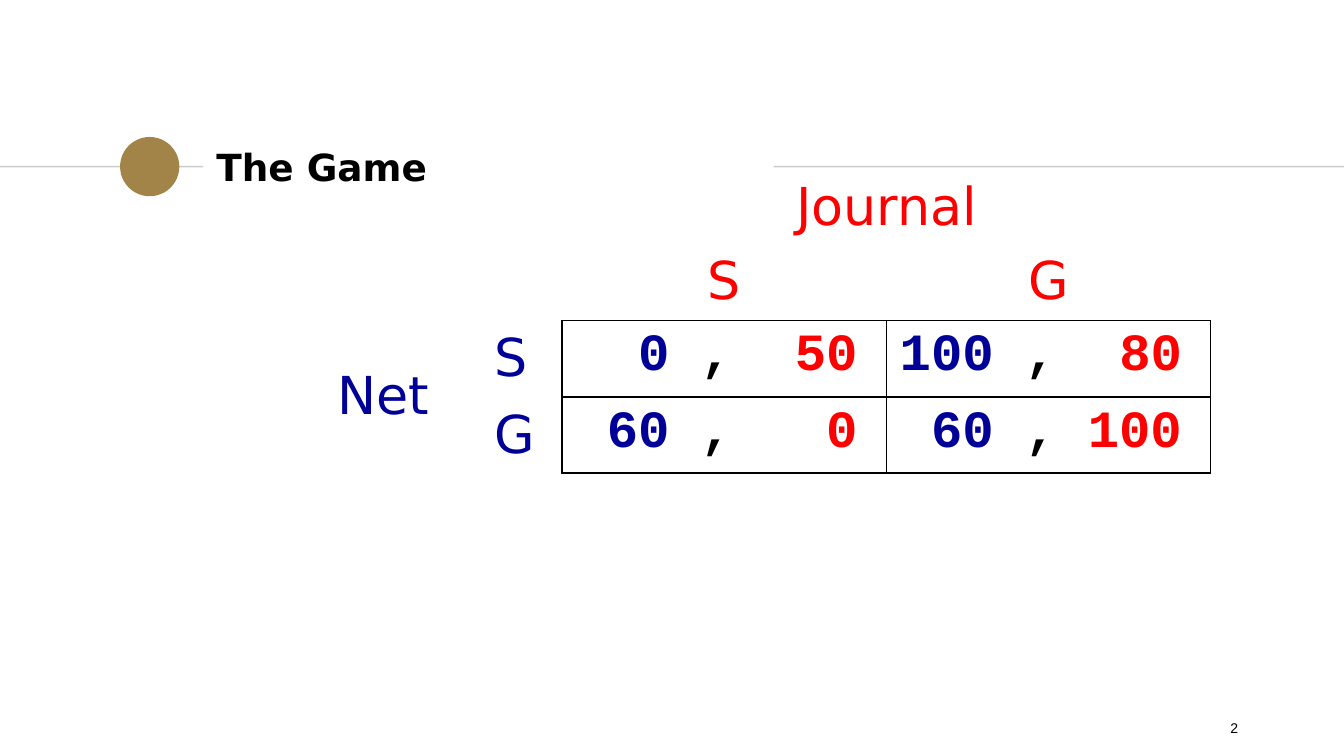
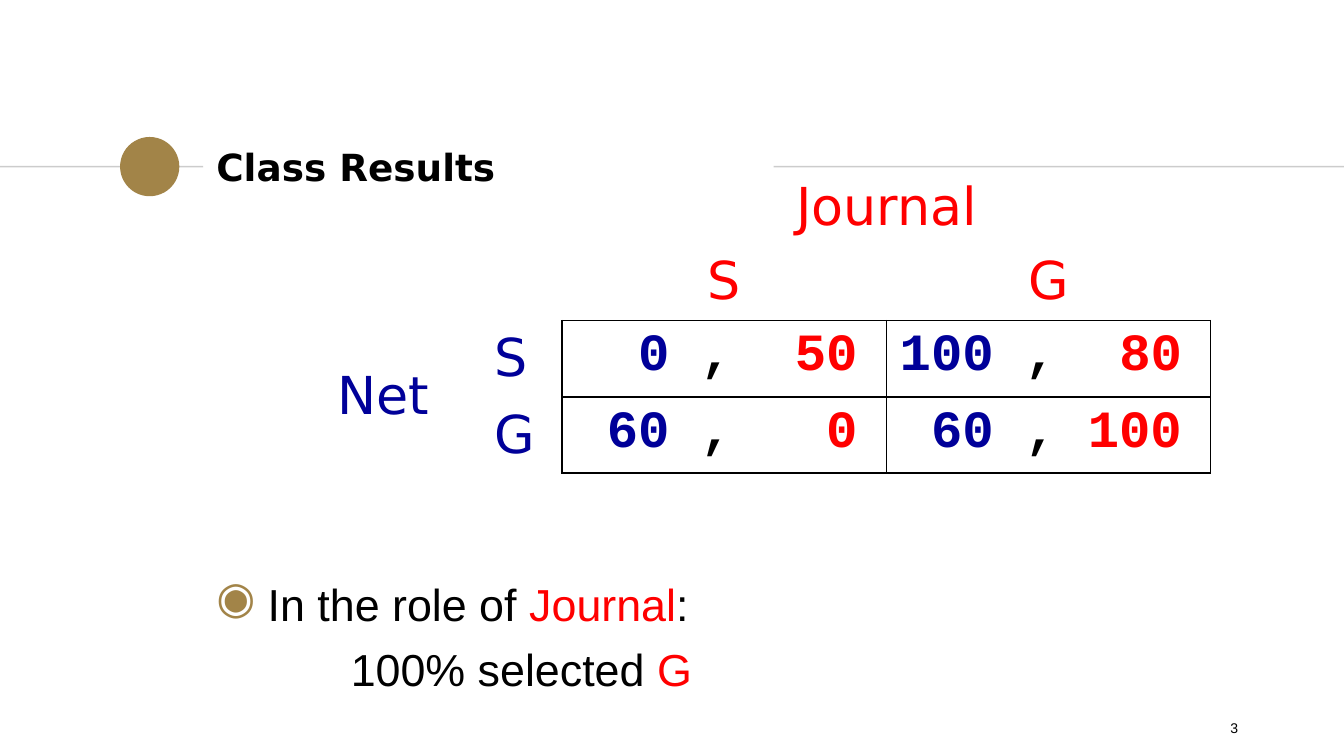
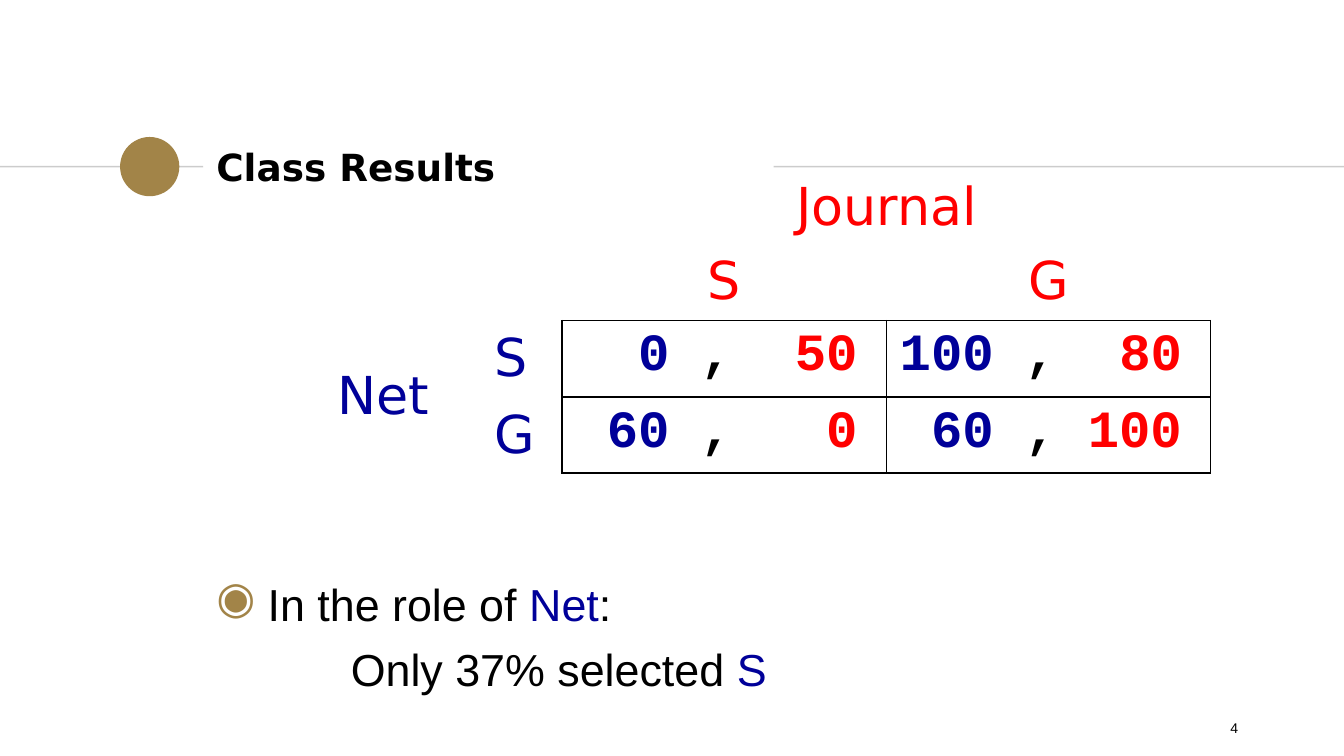
from dataclasses import dataclass
from lxml.etree import SubElement as Sub
from pptx import Presentation as Deck
from pptx.dml.color import RGBColor as Rgb
from pptx.enum.shapes import MSO_CONNECTOR as Link, MSO_SHAPE as Kind
from pptx.enum.text import MSO_ANCHOR as Anchor, PP_ALIGN as Align
from pptx.oxml import parse_xml
from pptx.oxml.ns import nsdecls, qn
from pptx.util import Cm, Pt


@dataclass(frozen=True)
class Theme:
    ink: str = "000000"
    gold: str = "A28448"
    rule: str = "CCCCCC"
    red: str = "FF0000"
    blue: str = "000099"
    sans: str = "Arial"
    head: str = "DejaVu Sans"
    mono: str = "Courier New"
    title: float = 20
    body: float = 24
    grid: float = 28
    foot: float = 7.5


NO_STYLE = "{2D5ABB26-0587-4C30-8999-92F81FD0307C}"
PAPER, STATION = "Journal", "Net"
MOVES = ("S", "G")
PAYOFFS = (((0, 50), (100, 80)), ((60, 0), (60, 100)))
COLS = (3.71, 1.53, 6.13, 6.13)
ROW = 1.4
PAD = 0.25


class Page:
    def __init__(self, deck, theme):
        self.deck, self.theme = deck, theme
        self.slide = None

    def start(self, title, number):
        t = self.theme
        self.slide = self.deck.slides.add_slide(self.deck.slide_layouts[6])
        box = self.box(3.84, 2.55, 10.78, 1.2, Anchor.MIDDLE)
        self.run(box.text_frame.paragraphs[0], title, t.title, t.head, bold=True)
        self.line(0, 3.15, box, 1)
        self.dot(2.27, 2.59, 1.12)
        self.line(25.4, 3.15, box, 3)
        foot = self.box(17.93, 13.23, 5.72, 0.76, Anchor.MIDDLE, top=0.43, bottom=0.13)
        para = foot.text_frame.paragraphs[0]
        para.alignment = Align.RIGHT
        self.run(para, str(number), t.foot, t.sans)

    def box(self, x, y, w, h, anchor, top=PAD, bottom=PAD):
        box = self.slide.shapes.add_textbox(Cm(x), Cm(y), Cm(w), Cm(h))
        frame = box.text_frame
        frame.word_wrap = True
        frame.vertical_anchor = anchor
        frame.margin_left = frame.margin_right = Cm(PAD)
        frame.margin_top, frame.margin_bottom = Cm(top), Cm(bottom)
        return box

    def run(self, para, text, size, font, color=None, bold=False):
        run = para.add_run()
        run.text = text
        run.font.size = Pt(size)
        run.font.name = font
        run.font.bold = bold
        run.font.color.rgb = Rgb.from_string(color or self.theme.ink)

    def line(self, x, y, box, side):
        line = self.slide.shapes.add_connector(Link.STRAIGHT, Cm(x), Cm(y), Cm(x), Cm(y))
        line.end_connect(box, side)
        line.line.color.rgb = Rgb.from_string(self.theme.rule)
        line.line.width = Pt(0.75)
        Sub(line._element.spPr, qn("a:effectLst"))

    def dot(self, x, y, size):
        dot = self.slide.shapes.add_shape(Kind.OVAL, Cm(x), Cm(y), Cm(size), Cm(size))
        dot.shadow.inherit = False
        dot.fill.solid()
        dot.fill.fore_color.rgb = Rgb.from_string(self.theme.gold)
        dot.line.fill.background()

    def label(self, cell, text, color, anchor=Anchor.TOP, align=Align.CENTER):
        cell.vertical_anchor = anchor
        para = cell.text_frame.paragraphs[0]
        para.alignment = align
        self.run(para, text, self.theme.grid, self.theme.head, color)

    def frame(self, cell):
        props = cell._tc.get_or_add_tcPr()
        for i, side in enumerate("LRTB"):
            props.insert(i, parse_xml(
                f'<a:ln{side} {nsdecls("a")} w="{Pt(1)}"><a:solidFill>'
                f'<a:srgbClr val="{self.theme.ink}"/></a:solidFill></a:ln{side}>'))

    def payoff(self, cell, left, right):
        t = self.theme
        para = cell.text_frame.paragraphs[0]
        left, right = str(left), str(right)
        lead = 3 - len(left)
        tabs = Sub(para._p.get_or_add_pPr(), qn("a:tabLst"))
        for stop in filter(None, (lead, 9 - len(right))):
            Sub(tabs, qn("a:tab"), pos=str(Pt(stop * t.grid * 0.6)), algn="l")
        self.run(para, ("\t" if lead else "") + left, t.grid, t.mono, t.blue, True)
        self.run(para, " ,", t.grid, t.mono, bold=True)
        self.run(para, "\t" + right, t.grid, t.mono, t.red, True)
        self.frame(cell)

    def game(self):
        t = self.theme
        table = self.slide.shapes.add_table(
            4, 4, Cm(5.38), Cm(3.18), Cm(sum(COLS)), Cm(4 * ROW)).table
        table.first_row = table.horz_banding = False
        table._tbl.tblPr.find(qn("a:tableStyleId")).text = NO_STYLE
        for col, width in zip(table.columns, COLS):
            col.width = Cm(width)
        for cell in table.iter_cells():
            cell.fill.background()
        table.cell(0, 2).merge(table.cell(0, 3))
        table.cell(2, 0).merge(table.cell(3, 0))
        self.label(table.cell(0, 2), PAPER, t.red, Anchor.BOTTOM)
        self.label(table.cell(2, 0), STATION, t.blue, Anchor.MIDDLE)
        for i, move in enumerate(MOVES):
            self.label(table.cell(1, i + 2), move, t.red)
            self.label(table.cell(i + 2, 1), move, t.blue, Anchor.MIDDLE, Align.LEFT)
            for j, pair in enumerate(PAYOFFS[i]):
                self.payoff(table.cell(i + 2, j + 2), *pair)

    def result(self, role, share, move, color):
        t = self.theme
        frame = self.box(3.84, 4.5, 18.92, 8.64, Anchor.BOTTOM, bottom=0).text_frame
        ask, found = frame.paragraphs[0], frame.add_paragraph()
        props = ask._p.get_or_add_pPr()
        props.set("marL", str(Cm(0.97)))
        props.set("indent", str(-Cm(0.97)))
        Sub(Sub(props, qn("a:buClr")), qn("a:srgbClr"), val=t.gold)
        Sub(props, qn("a:buChar"), char="◉")
        found._p.get_or_add_pPr().set("marL", str(Cm(2.54)))
        found.space_before = Pt(6)
        for para, text, tint in (
                (ask, "In the role of ", t.ink), (ask, role, color), (ask, ":", t.ink),
                (found, f"{share} selected ", t.ink), (found, move, color)):
            self.run(para, text, t.body, t.sans, tint)


def main():
    deck = Deck()
    deck.slide_width, deck.slide_height = Cm(25.4), Cm(14.29)
    theme = Theme()
    page = Page(deck, theme)
    page.start("The Game", 2)
    page.game()
    results = ((PAPER, "100%", "G", theme.red), (STATION, "Only 37%", "S", theme.blue))
    for number, result in enumerate(results, 3):
        page.start("Class Results", number)
        page.game()
        page.result(*result)
    deck.save("out.pptx")


if __name__ == "__main__":
    main()
